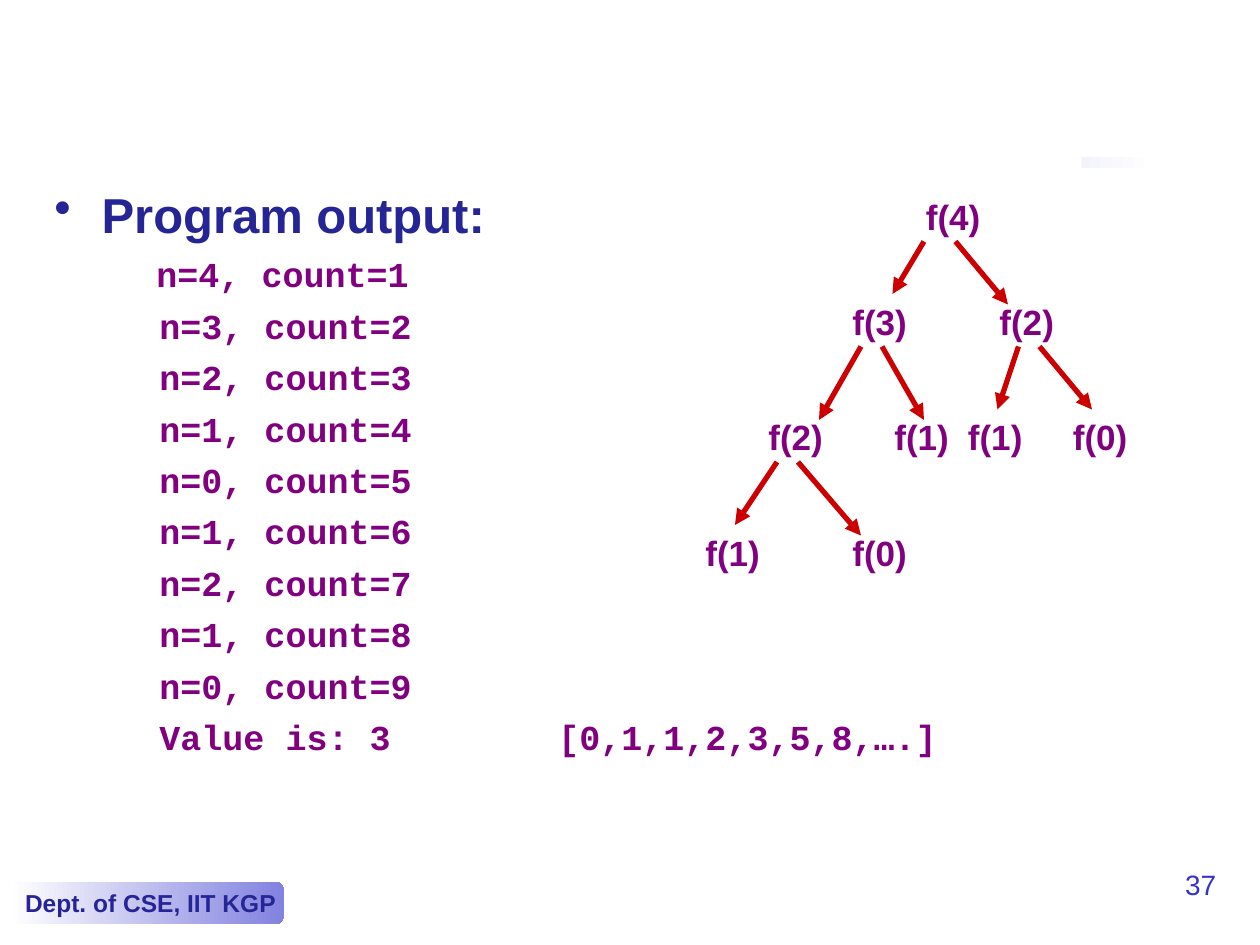
from dataclasses import dataclass

from lxml import etree
from pptx import Presentation
from pptx import util as u
from pptx.dml.color import RGBColor
from pptx.enum import shapes, text
from pptx.oxml import ns


@dataclass(frozen=True)
class Theme:
    sans: str = "Arial"
    mono: str = "Courier New"
    navy: str = "252595"
    blue: str = "3333CC"
    lilac: str = "8282E0"
    purple: str = "800080"
    red: str = "CC0000"
    white: str = "FFFFFF"
    heading: int = 28
    body: int = 20
    number: int = 16
    footer: int = 14


theme = Theme()
deck = Presentation()
deck.slide_width, deck.slide_height = u.Pt(720), u.Pt(540)
page = deck.slides.add_slide(deck.slide_layouts[6])


def write(para, words, size, color, bold=True, face=theme.sans):
    para.text = words
    para.font.name = face
    para.font.size = u.Pt(size)
    para.font.bold = bold
    para.font.color.rgb = RGBColor.from_string(color)


def add_panel(kind, left, top, width, height, *colors):
    panel = page.shapes.add_shape(kind, u.Pt(left), u.Pt(top), u.Pt(width), u.Pt(height))
    panel.shadow.inherit = False
    panel.line.fill.background()
    if len(colors) == 1:
        panel.fill.solid()
        panel.fill.fore_color.rgb = RGBColor.from_string(colors[0])
    else:
        panel.fill.gradient()
        panel.fill.gradient_angle = 0
        for stop, color in zip(panel.fill.gradient_stops, colors):
            stop.color.rgb = RGBColor.from_string(color)
    return panel


rectangle = shapes.MSO_SHAPE.RECTANGLE
add_panel(rectangle, 24, 90, 636, 6, theme.blue, theme.white)
add_panel(rectangle, 24, 78, 594, 26.5, theme.white)

footer = add_panel(shapes.MSO_SHAPE.ROUNDED_RECTANGLE, 6, 504, 156, 24, theme.white, theme.lilac)
footer.adjustments[0] = 0.17
footer.text_frame.word_wrap = False
footer.text_frame.vertical_anchor = text.MSO_ANCHOR.MIDDLE
para = footer.text_frame.paragraphs[0]
para.alignment = text.PP_ALIGN.LEFT
write(para, "Dept. of CSE, IIT KGP", theme.footer, theme.navy)

number = page.shapes.add_textbox(u.Pt(660), u.Pt(492), u.Pt(42), u.Pt(36))
number.text_frame.word_wrap = True
para = number.text_frame.paragraphs[0]
para.alignment = text.PP_ALIGN.RIGHT
write(para, "37", theme.number, theme.blue, bold=False)

output = page.shapes.add_textbox(u.Pt(24), u.Pt(102), u.Pt(678), u.Pt(396))
output.text_frame.word_wrap = True
para = output.text_frame.paragraphs[0]
write(para, "Program output:", theme.heading, theme.navy)
props = para._p.get_or_add_pPr()
props.set("marL", str(u.Pt(27)))
props.set("indent", str(u.Pt(-27)))
bullet = etree.Element(ns.qn("a:buChar"), char="•")
props.insert(0, bullet)

calls = [4, 3, 2, 1, 0, 1, 2, 1, 0]
lines = [f"n={n}, count={count}" for count, n in enumerate(calls, 1)]
for index, line in enumerate(lines + ["\tValue is: 3\t[0,1,1,2,3,5,8,….]"]):
    para = output.text_frame.add_paragraph()
    write(para, line, theme.body, theme.purple, face=theme.mono)
    para.space_before = u.Pt(5.35)
    props = para._p.get_or_add_pPr()
    if line.startswith("\t"):
        tabs = etree.Element(ns.qn("a:tabLst"))
        for position in (60, 288):
            etree.SubElement(tabs, ns.qn("a:tab"), pos=str(u.Pt(position)), algn="l")
        props.find(ns.qn("a:defRPr")).addprevious(tabs)
    else:
        props.set("marL", str(u.Pt(60 if index else 58.3)))

nodes = [
    ("f(4)", 522, 108),
    ("f(3)", 480, 168), ("f(2)", 564, 168),
    ("f(2)", 432, 234), ("f(1)", 504, 234), ("f(1)", 546, 234), ("f(0)", 606, 234),
    ("f(1)", 396, 300), ("f(0)", 480, 300),
]
for label, left, top in nodes:
    box = page.shapes.add_textbox(u.Pt(left), u.Pt(top), u.Pt(54), u.Pt(31))
    box.text_frame.word_wrap = True
    write(box.text_frame.paragraphs[0], label, theme.body, theme.purple)

arrows = [
    (528, 138, 510, 168), (546, 138, 576, 174),
    (492, 198, 468, 240), (504, 198, 528, 240),
    (582, 198, 570, 234), (594, 198, 624, 234),
    (444, 264, 420, 300), (456, 264, 492, 306),
]
for ends in arrows:
    arrow = page.shapes.add_connector(shapes.MSO_CONNECTOR.STRAIGHT, *map(u.Pt, ends))
    arrow.line.width = u.Pt(3)
    arrow.line.color.rgb = RGBColor.from_string(theme.red)
    etree.SubElement(arrow.line._get_or_add_ln(), ns.qn("a:tailEnd"), type="triangle")
    etree.SubElement(arrow._element.spPr, ns.qn("a:effectLst"))

deck.save("out.pptx")
